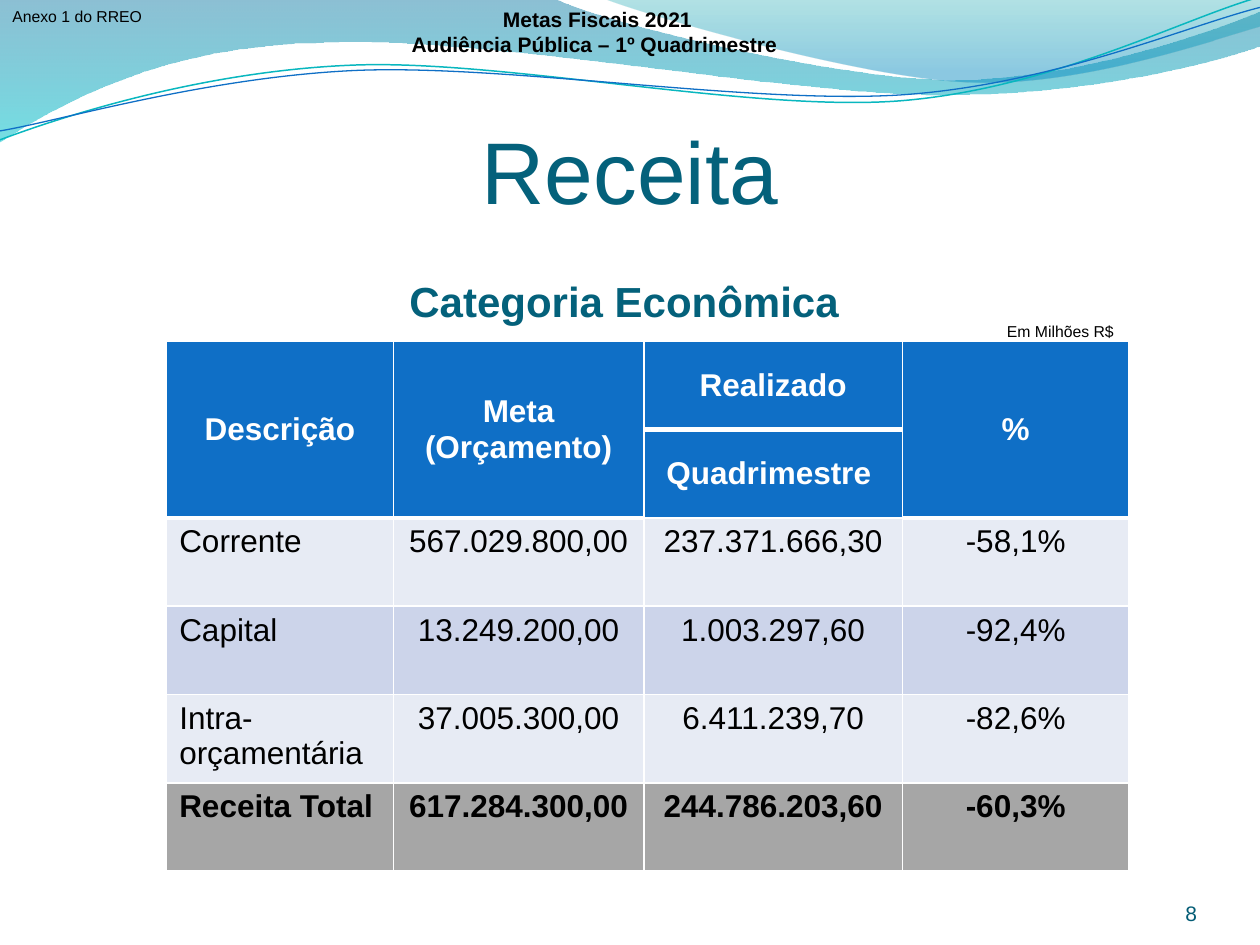
from dataclasses import dataclass

from lxml import etree
from pptx import Presentation, util as u
from pptx.dml import color
from pptx.enum import text
from pptx.oxml import ns

FONT = "Arial"
CENTER, LEFT, RIGHT = text.PP_ALIGN.CENTER, text.PP_ALIGN.LEFT, text.PP_ALIGN.RIGHT
TOP, MIDDLE, BOTTOM = text.MSO_ANCHOR.TOP, text.MSO_ANCHOR.MIDDLE, text.MSO_ANCHOR.BOTTOM


@dataclass(frozen=True)
class Label:
    box: tuple[float, float, float, float]
    lines: tuple[str, ...]
    size: float
    hue: str = "000000"
    bold: bool = False
    align: text.PP_ALIGN = CENTER
    anchor: text.MSO_ANCHOR = TOP
    margins: tuple[float, float] = (0.25, 0.13)


@dataclass(frozen=True)
class Stop:
    position: float
    hue: str
    opacity: int


@dataclass(frozen=True)
class Wave:
    start: tuple[float, float]
    segments: tuple[tuple[float, ...], ...]
    stops: tuple[Stop, ...] = ()
    angle: int = 0
    hue: str = ""
    width: float = 0
    rotation: float = 0


@dataclass(frozen=True)
class Row:
    values: tuple[str, ...]
    fill: str
    hue: str = "000000"
    bold: bool = False
    header: bool = False


WAVES = (
    Wave((0, 0), ((11.18, -0.03), (12.09, 0.43, 16.87, 1.6, 19.25, 1.6),
                  (21.67, 1.6, 24.33, 0.66, 25.4, 0.23), (25.43, 0.91),
                  (24.97, 1.12, 22.1, 1.93, 18.95, 1.91),
                  (15.8, 1.91, 9.7, 0.71, 6.53, 0.86),
                  (3.28, 0.89, 1.17, 2.11, -0.03, 2.87), (0, 0)),
         (Stop(0, "0074A0", 45), Stop(1, "00C4CD", 55)), 270),
    Wave((12.17, -0.03), ((12.93, 0.28, 17.32, 1.57, 19.53, 1.65),
                          (21.74, 1.75, 24.41, 0.81, 25.4, 0.53), (25.4, 0),
                          (12.17, -0.03)),
         (Stop(0.2, "008ABF", 45), Stop(1, "00A0A8", 30)), 90),
    Wave((-0.05, 2.22), ((1.19, 1.82, 4.02, 1.04, 7.05, 1.05),
                         (10.05, 1.05, 15.02, 2.37, 18.08, 2.29),
                         (21.13, 2.2, 23.87, 0.91, 25.41, 0.55)),
         hue="09B7BF", width=0.85, rotation=357.3),
    Wave((-0.04, 2.04), ((1.16, 1.9, 4.18, 1.15, 7.2, 1.16),
                         (10.25, 1.18, 15.13, 2.23, 18.18, 2.17),
                         (21.21, 2.1, 23.93, 1.06, 25.45, 0.75)),
         hue="0F6FC6", width=0.75, rotation=357.3),
)

HEADINGS = (
    Label((1.27, 1.84, 22.86, 3.17), ("Receita",), 50, "04617B", anchor=MIDDLE, margins=(0, 0)),
    Label((1.27, 5.14, 22.86, 1.83), ("Categoria Econômica ",), 24, "04617B", True,
          anchor=MIDDLE, margins=(0.13, 0)),
    Label((22.02, 17.65, 2.11, 1.02), ("8",), 12, "035C75", align=RIGHT, anchor=BOTTOM,
          margins=(0, 0)),
)
NOTES = (
    Label((20.04, 6.35, 2.67, 0.64), ("Em Milhões R$",), 9),
    Label((0, 0, 3.45, 0.64), ("Anexo 1 do RREO",), 9, align=LEFT),
    Label((7.74, 0, 8.61, 1.27),
          ("Metas Fiscais 2021", "Audiência Pública – 1º Quadrimestre "), 12, bold=True,
          anchor=MIDDLE),
)

COLUMN_WIDTHS = (4.57, 5.05, 5.21, 4.57)
ROW_HEIGHT = 1.78
SPLIT_COLUMN = 2
ROWS = (
    Row(("Descrição", "Meta (Orçamento)", "Realizado", "%"), "0F6FC6", "FFFFFF", True, True),
    Row(("", "", "Quadrimestre ", ""), "0F6FC6", "FFFFFF", True, True),
    Row(("Corrente", "567.029.800,00", "237.371.666,30", "-58,1%"), "E7EBF4"),
    Row(("Capital", "13.249.200,00", "1.003.297,60", "-92,4%"), "CCD4EA"),
    Row(("Intra-orçamentária", "37.005.300,00", "6.411.239,70", "-82,6%"), "E7EBF4"),
    Row(("Receita Total", "617.284.300,00", "244.786.203,60", "-60,3%"), "A6A6A6", bold=True),
)


def rgb(hue: str) -> color.RGBColor:
    return color.RGBColor.from_string(hue)


def style(paragraph, size: float, hue: str, bold: bool, align: text.PP_ALIGN) -> None:
    paragraph.alignment = align
    font = paragraph.font
    font.name, font.size, font.bold = FONT, u.Pt(size), bold
    font.color.rgb = rgb(hue)


def bend(shape, segments: tuple[tuple[float, ...], ...]) -> None:
    lines = iter(list(shape._element.iter(ns.qn("a:lnTo"))))
    for segment in segments:
        first = next(lines)
        if len(segment) == 6:
            first.tag = ns.qn("a:cubicBezTo")
            for _ in range(2):
                extra = next(lines)
                first.append(extra[0])
                extra.getparent().remove(extra)


def draw_wave(slide, wave: Wave) -> None:
    start, *others = [
        (u.Cm(x), u.Cm(y)) for segment in (wave.start, *wave.segments)
        for x, y in zip(segment[::2], segment[1::2])]
    builder = slide.shapes.build_freeform(*start)
    builder.add_line_segments(others, close=bool(wave.stops))
    shape = builder.convert_to_shape()
    bend(shape, wave.segments)
    shape.rotation = wave.rotation
    shape.shadow.inherit = False
    if not wave.stops:
        shape.fill.background()
        shape.line.color.rgb = rgb(wave.hue)
        shape.line.width = u.Pt(wave.width)
        return
    shape.line.fill.background()
    shape.fill.gradient()
    shape.fill.gradient_angle = wave.angle
    for target, stop in zip(shape.fill.gradient_stops, wave.stops):
        target.position = stop.position
        target.color.rgb = rgb(stop.hue)
    for element, stop in zip(shape._element.iter(ns.qn("a:srgbClr")), wave.stops):
        etree.SubElement(element, ns.qn("a:alpha"), val=str(stop.opacity * 1000))


def draw_label(slide, label: Label) -> None:
    frame = slide.shapes.add_textbox(*map(u.Cm, label.box)).text_frame
    frame.word_wrap = True
    frame.vertical_anchor = label.anchor
    frame.margin_left, frame.margin_top = map(u.Cm, label.margins)
    frame.margin_right, frame.margin_bottom = frame.margin_left, frame.margin_top
    frame.text = "\n".join(label.lines)
    for paragraph in frame.paragraphs:
        style(paragraph, label.size, label.hue, label.bold, label.align)


def draw_borders(cell, heavy: set[str]) -> None:
    properties = cell._tc.get_or_add_tcPr()
    for side in "LRTB":
        width = u.Pt(3 if side in heavy else 0.96)
        line = etree.SubElement(properties, ns.qn(f"a:ln{side}"), w=str(int(width)))
        fill = etree.SubElement(line, ns.qn("a:solidFill"))
        etree.SubElement(fill, ns.qn("a:srgbClr"), val="FFFFFF")


def heavy_sides(row: int, column: int) -> set[str]:
    rule_row = 0 if column == SPLIT_COLUMN else 1
    return ({"B"} if row in (0, rule_row) else set()) | ({"T"} if row == rule_row + 1 else set())


def draw_table(slide) -> None:
    table = slide.shapes.add_table(
        len(ROWS), len(COLUMN_WIDTHS), u.Cm(3.36), u.Cm(6.88),
        u.Cm(sum(COLUMN_WIDTHS)), u.Cm(ROW_HEIGHT * len(ROWS))).table
    table.first_row = table.horz_banding = False
    for column, width in zip(table.columns, COLUMN_WIDTHS):
        column.width = u.Cm(width)
    for row_index, row in enumerate(ROWS):
        table.rows[row_index].height = u.Cm(ROW_HEIGHT)
        for column_index, value in enumerate(row.values):
            cell = table.cell(row_index, column_index)
            draw_borders(cell, heavy_sides(row_index, column_index))
            cell.fill.solid()
            cell.fill.fore_color.rgb = rgb(row.fill)
            cell.vertical_anchor = MIDDLE if row.header else TOP
            cell.text = value
            align = CENTER if row.header or column_index else LEFT
            style(cell.text_frame.paragraphs[0], 18, row.hue, row.bold, align)
    for column_index in range(len(COLUMN_WIDTHS)):
        if column_index != SPLIT_COLUMN:
            table.cell(0, column_index).merge(table.cell(1, column_index))


def main() -> None:
    """Build the revenue slide with its wave header and budget table."""
    presentation = Presentation()
    presentation.slide_width, presentation.slide_height = u.Cm(25.4), u.Cm(19.05)
    slide = presentation.slides.add_slide(presentation.slide_layouts[6])
    for wave in WAVES:
        draw_wave(slide, wave)
    for heading in HEADINGS:
        draw_label(slide, heading)
    draw_table(slide)
    for note in NOTES:
        draw_label(slide, note)
    presentation.save("out.pptx")


if __name__ == "__main__":
    main()
